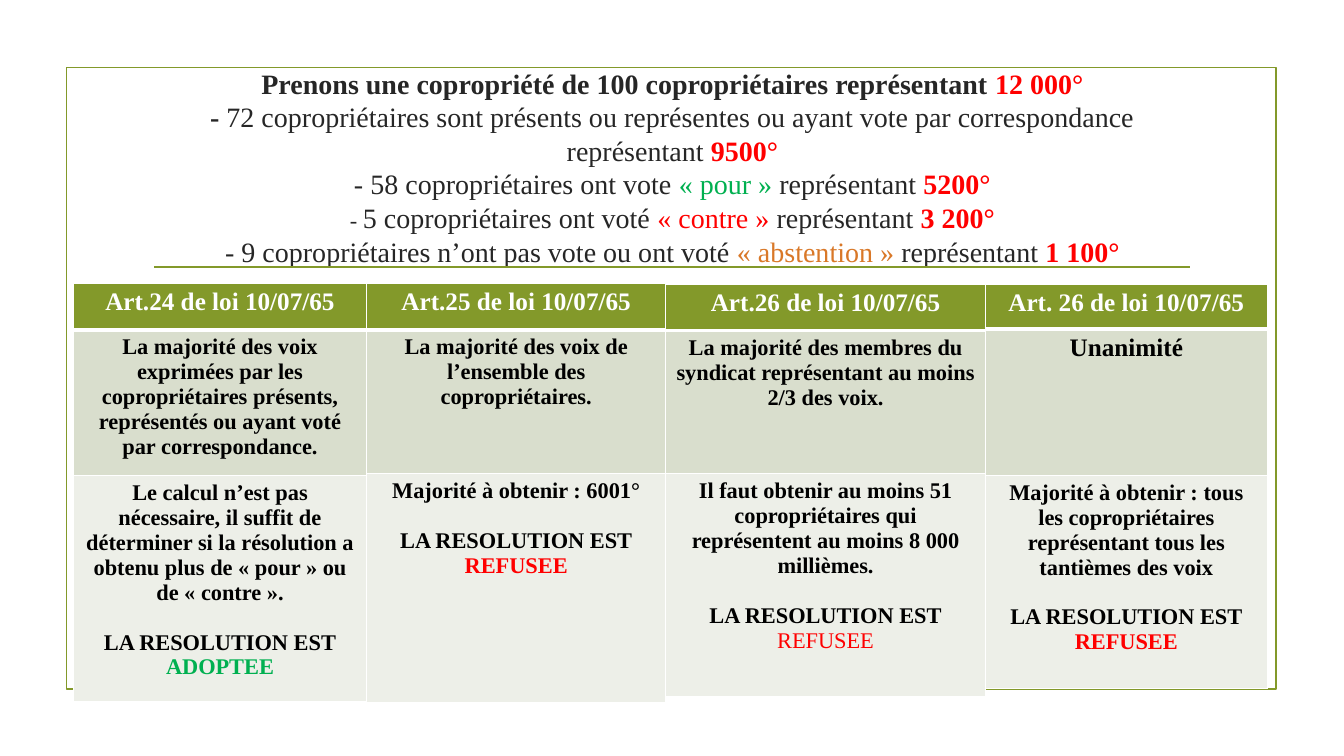
"""Build the slide on co-ownership voting majorities."""
import pptx
import pptx.dml.color
import pptx.enum.shapes
import pptx.enum.text
import pptx.oxml
import pptx.oxml.ns
import pptx.util

Cm, Pt = pptx.util.Cm, pptx.util.Pt
RGBColor = pptx.dml.color.RGBColor
CENTER = pptx.enum.text.PP_ALIGN.CENTER

OLIVE = RGBColor(0x83, 0x99, 0x2A)
SAGE = RGBColor(0xD9, 0xDE, 0xCD)
PALE = RGBColor(0xED, 0xEF, 0xE8)
DARK = RGBColor(0x26, 0x26, 0x26)
BLACK = RGBColor(0, 0, 0)
WHITE = RGBColor(0xFF, 0xFF, 0xFF)
RED = RGBColor(0xFF, 0, 0)
GREEN = RGBColor(0, 0xB0, 0x50)
ORANGE = RGBColor(0xD9, 0x78, 0x28)
FONT = "Times New Roman"

TITLE_LINES = [
    [("Prenons une copropriété de 100 copropriétaires représentant ", 20, DARK, True),
     ("12 000°", 20, RED, True)],
    [("- ", 20, DARK, True),
     ("72 copropriétaires sont présents ou représentes ou ayant vote par "
      "correspondance représentant ", 20, DARK, False),
     ("9500°", 20, RED, True)],
    [("- 58 copropriétaires ont vote ", 20, DARK, False),
     ("« pour » ", 20, GREEN, False),
     ("représentant ", 20, DARK, False),
     ("5200°", 20, RED, True)],
    [("- ", 16, DARK, False),
     ("5 copropriétaires ont voté ", 20, DARK, False),
     ("« contre » ", 20, RED, False),
     ("représentant ", 20, DARK, False),
     ("3 200°", 20, RED, True)],
    [("- 9 copropriétaires n’ont pas vote ou ont voté ", 20, DARK, False),
     ("« abstention » ", 20, ORANGE, False),
     ("représentant ", 20, DARK, False),
     ("1 100°", 20, RED, True)],
]

VERDICT = "LA RESOLUTION EST"
ARTICLES = [
    dict(top=7.14, width=7.39, rows=(1.17, 3.68, 5.69),
         head="Art.24 de loi 10/07/65",
         rule="La majorité des voix exprimées par les copropriétaires présents, "
              "représentés ou ayant voté par correspondance.", rule_size=16,
         need="Le calcul n’est pas nécessaire, il suffit de déterminer si la résolution "
              "a obtenu plus de « pour » ou de « contre ».",
         result=("ADOPTEE", 16, GREEN, True)),
    dict(top=7.14, width=7.54, rows=(1.17, 3.63, 5.77),
         head="Art.25 de loi 10/07/65",
         rule="La majorité des voix de l’ensemble des copropriétaires.", rule_size=16,
         need="Majorité à obtenir : 6001°",
         result=("REFUSEE", 16, RED, True)),
    dict(top=7.16, width=8.05, rows=(1.17, 3.61, 5.61),
         head="Art.26 de loi 10/07/65",
         rule="La majorité des membres du syndicat représentant au moins 2/3 des voix.",
         rule_size=16,
         need="Il faut obtenir au moins 51 copropriétaires qui représentent au moins "
              "8 000 millièmes.",
         result=("REFUSEE", 16, RED, False)),
    dict(top=7.16, width=7.11, rows=(1.14, 3.68, 5.38),
         head="Art. 26 de loi 10/07/65",
         rule="Unanimité", rule_size=18,
         need="Majorité à obtenir : tous les copropriétaires représentant tous les "
              "tantièmes des voix",
         result=("REFUSEE", 16, RED, True)),
]
TABLES_LEFT = 1.85


def write_lines(tf, lines):
    """Write one centred paragraph per line of (text, size, colour, bold) runs."""
    for i, line in enumerate(lines):
        p = tf.paragraphs[0] if i == 0 else tf.add_paragraph()
        p.alignment = CENTER
        for text, size, colour, bold in line:
            r = p.add_run()
            r.text = text
            r.font.name = FONT
            r.font.size = Pt(size)
            r.font.bold = bold
            r.font.color.rgb = colour


def add_borders(cell, bottom):
    """Give a cell white borders, with its own bottom width in points."""
    tcPr = cell._tc.get_or_add_tcPr()
    for side, width in (("L", 1), ("R", 1), ("T", 1), ("B", bottom)):
        tcPr.append(pptx.oxml.parse_xml(
            f'<a:ln{side} {pptx.oxml.ns.nsdecls("a")} w="{Pt(width)}">'
            f'<a:solidFill><a:srgbClr val="{WHITE}"/></a:solidFill></a:ln{side}>'))


def add_article(s, left, article):
    """Add the one-column table of an article."""
    heights = article["rows"]
    table = s.shapes.add_table(3, 1, Cm(left), Cm(article["top"]), Cm(article["width"]),
                               Cm(sum(heights))).table
    table.first_row = table.horz_banding = False
    contents = [
        [[(article["head"], 18, WHITE, True)]],
        [[(article["rule"], article["rule_size"], BLACK, True)]],
        [[(article["need"], 16, BLACK, True)], [(VERDICT, 16, BLACK, True)],
         [article["result"]]],
    ]
    for i, (lines, fill) in enumerate(zip(contents, (OLIVE, SAGE, PALE))):
        table.rows[i].height = Cm(heights[i])
        cell = table.cell(i, 0)
        add_borders(cell, 3 if i == 0 else 1)
        cell.fill.solid()
        cell.fill.fore_color.rgb = fill
        write_lines(cell.text_frame, lines)
    table.cell(2, 0).text_frame.paragraphs[1].space_before = Pt(17.7)


def main():
    """Compose and save the slide."""
    prs = pptx.Presentation()
    prs.slide_width, prs.slide_height = Cm(33.87), Cm(19.05)
    s = prs.slides.add_slide(prs.slide_layouts[5])

    frame = s.shapes.add_shape(pptx.enum.shapes.MSO_SHAPE.RECTANGLE,
                               Cm(1.68), Cm(1.7), Cm(30.48), Cm(15.67))
    frame.shadow.inherit = False
    frame.fill.background()
    rule = s.shapes.add_connector(pptx.enum.shapes.MSO_CONNECTOR.STRAIGHT,
                                  Cm(3.89), Cm(6.73), Cm(30), Cm(6.73))
    rule._element.spPr.append(
        pptx.oxml.parse_xml(f'<a:effectLst {pptx.oxml.ns.nsdecls("a")}/>'))
    for outlined in (frame, rule):
        outlined.line.color.rgb = OLIVE
        outlined.line.width = Pt(1.25)

    title = s.shapes.title
    title.left, title.top, title.width, title.height = Cm(3.61), Cm(2.39), Cm(26.67), Cm(3.63)
    tf = title.text_frame
    tf.word_wrap = True
    tf.auto_size = pptx.enum.text.MSO_AUTO_SIZE.NONE
    tf.vertical_anchor = pptx.enum.text.MSO_ANCHOR.MIDDLE
    write_lines(tf, TITLE_LINES)

    left = TABLES_LEFT
    for article in ARTICLES:
        add_article(s, left, article)
        left += article["width"]

    prs.save("out.pptx")


if __name__ == "__main__":
    main()
